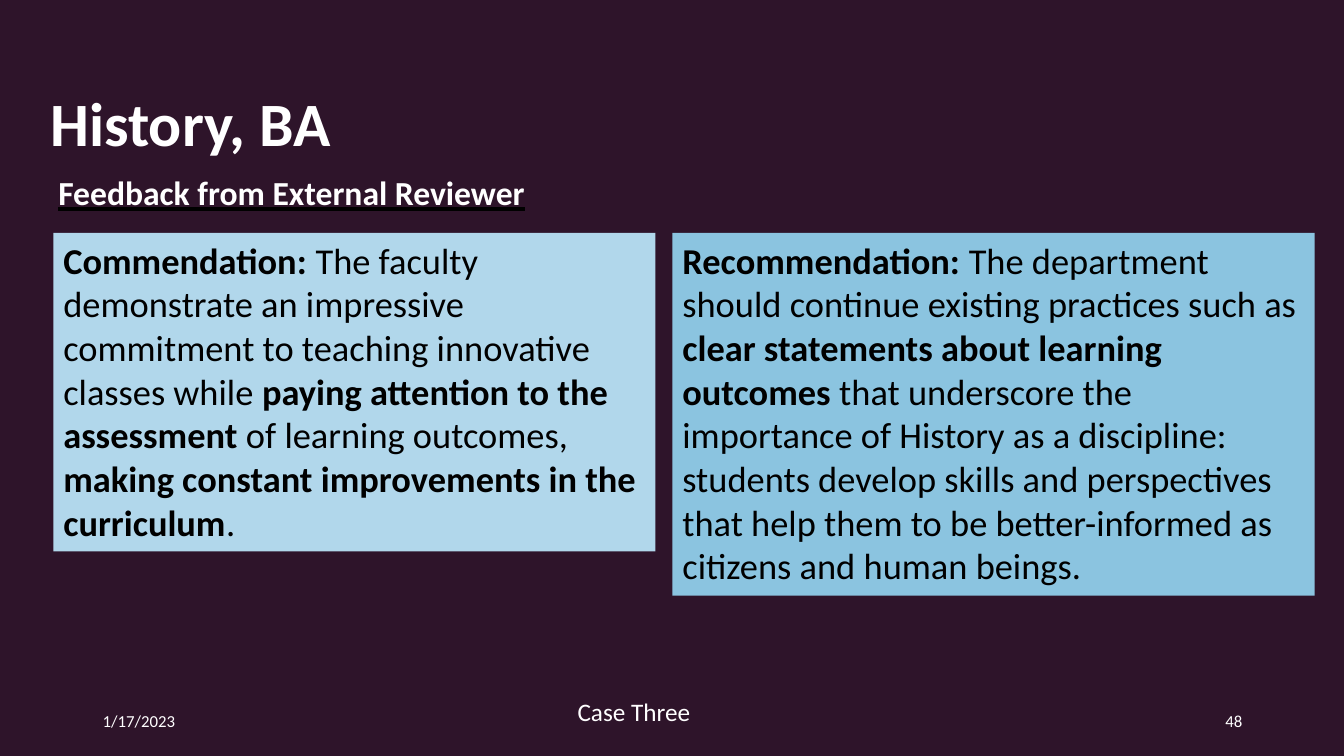
from lxml import etree
from pptx import Presentation
from pptx.dml.color import RGBColor
from pptx.enum import shapes, text
from pptx.oxml.ns import qn
from pptx.util import Inches, Pt

COLORS = {"background": "2E142A", "light": "FFFFFF", "dark": "000000",
          "commendation": "B1D7EB", "recommendation": "8BC4E0"}
FONT = "Calibri"

TITLE = "History, BA"
SUBTITLE = "Feedback from External Reviewer"
# Runs alternate between bold and regular, starting with bold.
PANELS = [
    ("commendation", (0.53, 2.31, 5.97, 3.16), [
        "Commendation: ",
        "The faculty demonstrate an impressive commitment to teaching "
        "innovative classes while ",
        "paying attention to the assessment ",
        "of learning outcomes, ",
        "making constant improvements in the curriculum",
        "."]),
    ("recommendation", (6.67, 2.31, 6.37, 3.6), [
        "Recommendation: ",
        "The department should continue existing practices such as ",
        "clear statements about learning outcomes ",
        "that underscore the importance of History as a discipline: students "
        "develop skills and perspectives that help them to be better-informed "
        "as citizens and human beings."]),
]
FOOTERS = [
    ("Case Three", (5.63, 6.86, 4.11, 0.4), 18, "TOP", "LEFT"),
    ("1/17/2023", (0.92, 6.95, 3, 0.4), 12, "MIDDLE", "LEFT"),
    ("48", (9.42, 6.95, 3, 0.4), 12, "MIDDLE", "RIGHT"),
]


def rgb(name):
    return RGBColor.from_string(COLORS[name])


def write(sp, parts, size, color="light", first_bold=False, anchor="TOP", align="LEFT"):
    """Fill a shape with one paragraph whose runs alternate in weight."""
    tf = sp.text_frame
    tf.word_wrap = True
    tf.auto_size = text.MSO_AUTO_SIZE.NONE
    tf.vertical_anchor = getattr(text.MSO_ANCHOR, anchor)
    p = tf.paragraphs[0]
    p.alignment = getattr(text.PP_ALIGN, align)
    for i, part in enumerate(parts):
        r = p.add_run()
        r.text = part
        r.font.name, r.font.size = FONT, Pt(size)
        r.font.bold = first_bold == (i % 2 == 0)
        r.font.color.rgb = rgb(color)
    return p


def underline(run, color):
    run.font.underline = True
    latin = run.font._element.find(qn("a:latin"))
    line = etree.Element(qn("a:uFill"))
    fill = etree.SubElement(line, qn("a:solidFill"))
    etree.SubElement(fill, qn("a:srgbClr"), val=COLORS[color])
    latin.addprevious(line)


def main():
    prs = Presentation()
    prs.slide_width, prs.slide_height = Inches(13.33), Inches(7.5)
    slide = prs.slides.add_slide(prs.slide_layouts[5])
    slide.background.fill.solid()
    slide.background.fill.fore_color.rgb = rgb("background")

    title = slide.shapes.title
    title.left, title.top, title.width, title.height = map(Inches, (0.4, 0.05, 9.87, 1.58))
    write(title, [TITLE], 44, first_bold=True, anchor="BOTTOM")

    sp = slide.shapes.add_textbox(*map(Inches, (0.48, 1.63, 8.62, 0.51)))
    p = write(sp, [SUBTITLE], 24, first_bold=True, align="JUSTIFY")
    p.line_spacing = 1.07
    underline(p.runs[0], "dark")

    for fill, box, parts in PANELS:
        sp = slide.shapes.add_shape(shapes.MSO_SHAPE.RECTANGLE, *map(Inches, box))
        sp.shadow.inherit = False
        sp.fill.solid()
        sp.fill.fore_color.rgb = rgb(fill)
        sp.line.fill.background()
        write(sp, parts, 26, "dark", first_bold=True)

    for label, box, size, anchor, align in FOOTERS:
        sp = slide.shapes.add_textbox(*map(Inches, box))
        write(sp, [label], size, anchor=anchor, align=align)

    prs.save("out.pptx")


if __name__ == "__main__":
    main()
